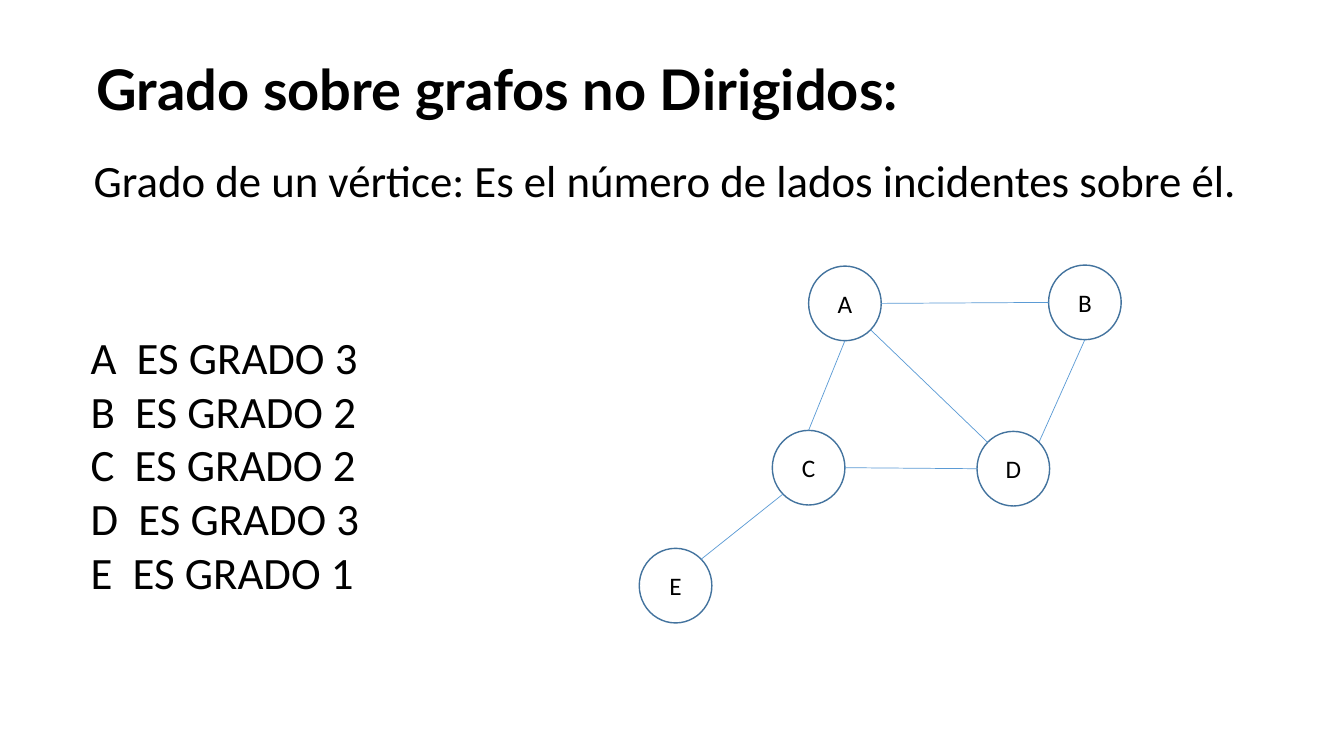
from dataclasses import dataclass
from math import cos, radians, sin

from lxml.etree import SubElement
from pptx import Presentation
from pptx.dml.color import RGBColor
from pptx.enum.shapes import MSO_CONNECTOR as Connector, MSO_SHAPE as Preset
from pptx.enum.text import MSO_ANCHOR as Anchor, MSO_AUTO_SIZE as AutoSize, PP_ALIGN as Align
from pptx.oxml.ns import qn
from pptx.util import Inches, Pt


@dataclass(frozen=True)
class Theme:
    """Colours, fonts and sizes of the slide."""
    text: RGBColor = RGBColor(0x00, 0x00, 0x00)
    vertex_fill: RGBColor = RGBColor(0xFF, 0xFF, 0xFF)
    vertex_line: RGBColor = RGBColor(0x43, 0x73, 0x9E)
    edge: RGBColor = RGBColor(0x5B, 0x9B, 0xD5)
    title_font: str = "Lato"
    body_font: str = "Calibri"
    title_size: int = 40
    body_size: int = 32
    vertex_size: int = 18
    vertex_line_width: float = 1
    edge_width: float = 0.5


THEME = Theme()
VERTEX_WIDTH, VERTEX_HEIGHT = 0.72, 0.74
VERTICES = {
    "A": (8.02, 2.64),
    "B": (10.4, 2.63),
    "C": (7.66, 4.27),
    "D": (9.69, 4.28),
    "E": (6.34, 5.44),
}
RIGHT, LOWER_RIGHT, BOTTOM, LOWER_LEFT = 0, 45, 90, 135
LEFT, TOP, UPPER_LEFT, UPPER_RIGHT = 180, 270, 225, 315
EDGES = [
    ("A", RIGHT, "B", LEFT),
    ("D", LEFT, "C", RIGHT),
    ("A", BOTTOM, "C", TOP),
    ("A", LOWER_RIGHT, "D", UPPER_LEFT),
    ("B", BOTTOM, "D", UPPER_RIGHT),
    ("C", LOWER_LEFT, "E", UPPER_RIGHT),
]
DEGREES = {"A": 3, "B": 2, "C": 2, "D": 3, "E": 1}


def add_run(paragraph, text, size, font=THEME.body_font, bold=False):
    """Add one styled run to a paragraph."""
    run = paragraph.add_run()
    run.text = text
    run.font.name = font
    run.font.size = Pt(size)
    run.font.bold = bold
    run.font.color.rgb = THEME.text


def add_text(slide, box, lines, size=THEME.body_size, **style):
    """Add a wrapping text box with one paragraph per line."""
    shape = slide.shapes.add_textbox(*map(Inches, box))
    frame = shape.text_frame
    frame.word_wrap = True
    frame.auto_size = AutoSize.SHAPE_TO_FIT_TEXT
    for index, line in enumerate(lines):
        paragraph = frame.add_paragraph() if index else frame.paragraphs[0]
        add_run(paragraph, line, size, **style)


def add_vertex(slide, name):
    """Add a labelled circle for a vertex of the graph."""
    box = (*VERTICES[name], VERTEX_WIDTH, VERTEX_HEIGHT)
    shape = slide.shapes.add_shape(Preset.OVAL, *map(Inches, box))
    shape.shadow.inherit = False
    shape.fill.solid()
    shape.fill.fore_color.rgb = THEME.vertex_fill
    shape.line.color.rgb = THEME.vertex_line
    shape.line.width = Pt(THEME.vertex_line_width)
    shape.text_frame.vertical_anchor = Anchor.MIDDLE
    paragraph = shape.text_frame.paragraphs[0]
    paragraph.alignment = Align.CENTER
    add_run(paragraph, name, THEME.vertex_size)


def rim_point(name, angle):
    """Return the point on a vertex's rim at a clockwise angle from the right."""
    left, top = VERTICES[name]
    x = left + VERTEX_WIDTH / 2 * (1 + cos(radians(angle)))
    y = top + VERTEX_HEIGHT / 2 * (1 + sin(radians(angle)))
    return Inches(x), Inches(y)


def add_edge(slide, start, start_angle, end, end_angle):
    """Draw a graph edge between the rims of two vertices."""
    connector = slide.shapes.add_connector(
        Connector.STRAIGHT, *rim_point(start, start_angle), *rim_point(end, end_angle))
    connector.line.color.rgb = THEME.edge
    connector.line.width = Pt(THEME.edge_width)
    SubElement(connector._element.spPr, qn("a:effectLst"))


def main():
    """Build the slide on the degree of vertices and save it."""
    presentation = Presentation()
    presentation.slide_width = Inches(13.33)
    presentation.slide_height = Inches(7.5)
    slide = presentation.slides.add_slide(presentation.slide_layouts[6])
    add_text(slide, (0.86, 0.49, 10.26, 0.77), ["Grado sobre grafos no Dirigidos:"],
             THEME.title_size, font=THEME.title_font, bold=True)
    add_text(slide, (0.83, 1.47, 11.73, 0.64),
             ["Grado de un vértice: Es el número de lados incidentes sobre él."])
    for name in VERTICES:
        add_vertex(slide, name)
    for edge in EDGES:
        add_edge(slide, *edge)
    add_text(slide, (0.8, 3.22, 4.71, 2.79),
             [f"{name}  ES GRADO {degree}" for name, degree in DEGREES.items()])
    presentation.save("out.pptx")


if __name__ == "__main__":
    main()
